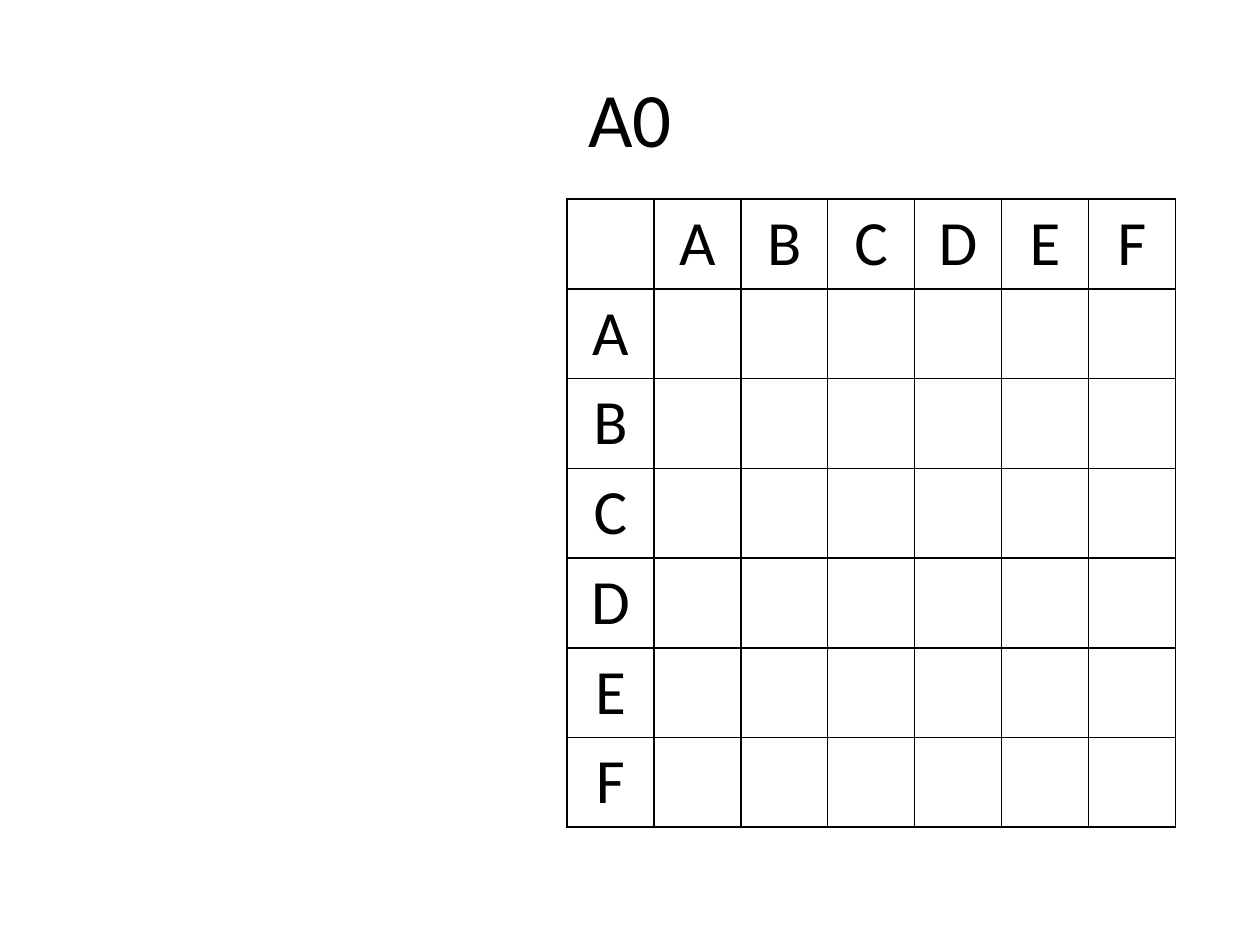
from dataclasses import dataclass

from lxml.etree import SubElement
from pptx import Presentation
from pptx.dml.color import RGBColor
from pptx.enum.text import MSO_ANCHOR, PP_ALIGN
from pptx.oxml.ns import qn
from pptx.util import Inches, Pt


@dataclass(frozen=True)
class Theme:
    font: str = "Calibri"
    ink: str = "000000"
    title_size: int = 44
    label_size: int = 36
    border_width: int = 1


THEME = Theme()
LABELS = "ABCDEF"
COLUMN_WIDTH = 0.69
ROW_HEIGHT = 0.7


def write_text(tf, text, size):
    tf.text = text
    p = tf.paragraphs[0]
    p.alignment = PP_ALIGN.CENTER
    for r in p.runs:
        r.font.name = THEME.font
        r.font.size = Pt(size)
        r.font.bold = False
        r.font.color.rgb = RGBColor.from_string(THEME.ink)


def add_title(s, text):
    title = s.shapes.title
    title.left, title.top = Inches(0.5), Inches(0.3)
    title.width, title.height = Inches(9), Inches(1.25)
    title.text_frame.vertical_anchor = MSO_ANCHOR.MIDDLE
    write_text(title.text_frame, text, THEME.title_size)


def set_borders(cell):
    """Draw all four edges; call before the fill, which must follow them in the XML."""
    tc_pr = cell._tc.get_or_add_tcPr()
    for edge in ("lnL", "lnR", "lnT", "lnB"):
        ln = SubElement(tc_pr, qn(f"a:{edge}"), w=str(Pt(THEME.border_width)))
        fill = SubElement(ln, qn("a:solidFill"))
        SubElement(fill, qn("a:srgbClr"), val=THEME.ink)


def add_matrix(s, labels, left, top):
    """Add an empty square grid with the labels along its top row and left column."""
    n = len(labels) + 1
    frame = s.shapes.add_table(n, n, Inches(left), Inches(top),
                               Inches(n * COLUMN_WIDTH), Inches(n * ROW_HEIGHT))
    table = frame.table
    table.first_row = table.horz_banding = False
    for cell in table.iter_cells():
        set_borders(cell)
        cell.fill.background()
    for i, label in enumerate(labels, start=1):
        for cell in (table.cell(0, i), table.cell(i, 0)):
            write_text(cell.text_frame, label, THEME.label_size)


def main():
    prs = Presentation()
    prs.slide_width, prs.slide_height = Inches(10), Inches(7.5)
    s = prs.slides.add_slide(prs.slide_layouts.get_by_name("Title Only"))
    add_title(s, "A0")
    add_matrix(s, LABELS, left=4.5, top=1.58)
    prs.save("out.pptx")


if __name__ == "__main__":
    main()
